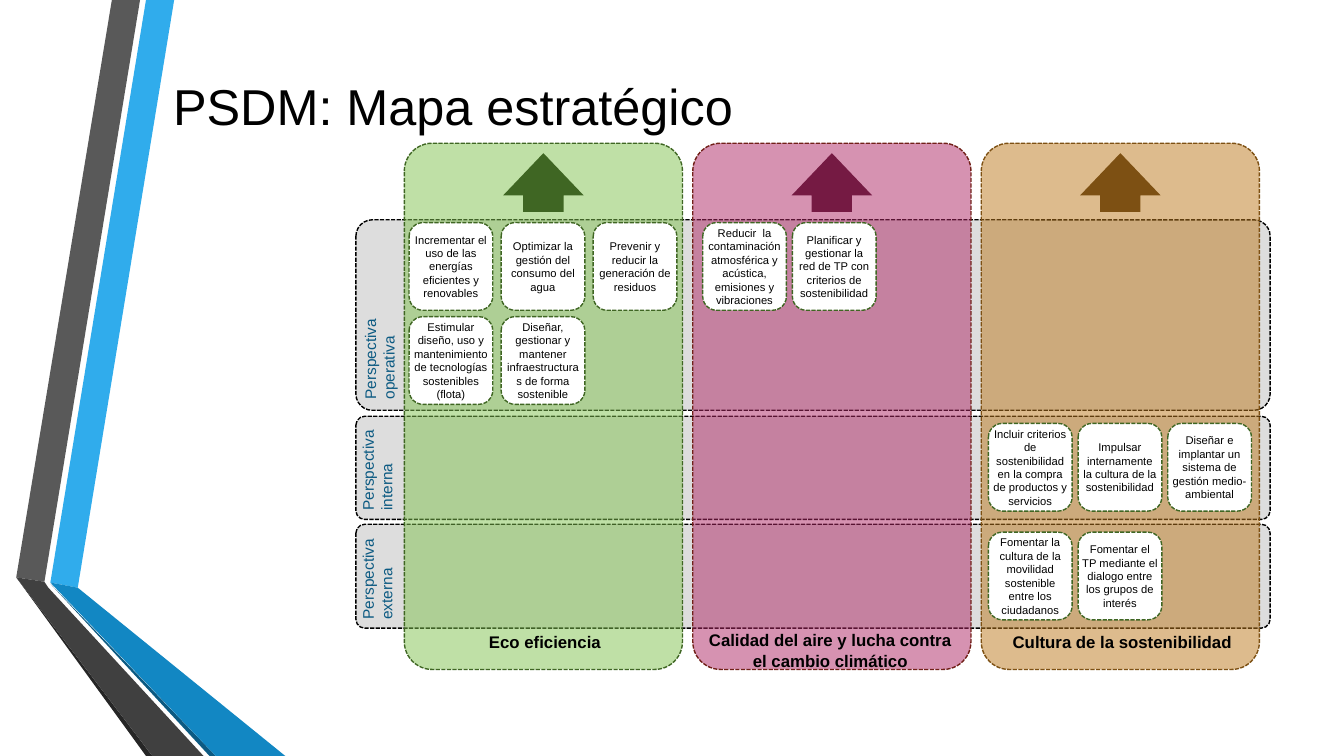
"""Build the PSDM strategic map slide."""
from dataclasses import dataclass

from lxml.etree import SubElement
from pptx import Presentation
from pptx.dml.color import RGBColor
from pptx.enum.dml import MSO_LINE
from pptx.enum.shapes import MSO_SHAPE
from pptx.enum.text import MSO_ANCHOR, PP_ALIGN
from pptx.oxml.ns import qn
from pptx.util import Cm, Pt


@dataclass(frozen=True)
class Theme:
    """Hold the colours and type sizes of the slide."""
    font: str = "Arial"
    title_size: int = 36
    caption_size: int = 12
    band_size: int = 11
    card_size: int = 8
    black: str = "000000"
    white: str = "FFFFFF"
    band: str = "DDDDDD"
    sky: str = "30ACEC"
    blue: str = "1287C3"
    navy: str = "0C5A82"
    grey: str = "595959"
    dark_grey: str = "404040"
    charcoal: str = "262626"
    green: str = "80C34F"
    dark_green: str = "3F6623"
    pink: str = "AF2764"
    dark_pink: str = "751A43"
    red: str = "712018"
    ochre: str = "BC791C"
    brown: str = "7D5013"


THEME = Theme()

RIBBONS = [
    (THEME.sky, [(1.27, 14.68), (1.96, 14.81), (4.39, 0), (3.68, 0)]),
    (THEME.grey, [(3.53, 0), (2.82, 0), (0.41, 14.55), (1.12, 14.66)]),
    (THEME.charcoal, [(0.41, 14.55), (3.68, 19.05), (3.84, 19.05)]),
    (THEME.navy, [(1.27, 14.71), (5.28, 19.05), (5.44, 19.05)]),
    (THEME.blue, [(1.27, 14.68), (5.44, 19.05), (7.19, 19.05), (1.96, 14.81)]),
    (THEME.dark_grey, [(5.13, 19.05), (1.22, 14.81), (1.12, 14.66),
                       (0.41, 14.55), (3.84, 19.05)]),
]

BANDS = [
    (13.21, 2.62, ["Perspectiva externa"]),
    (10.49, 2.6, ["Perspectiva interna"]),
    (5.54, 4.8, ["Perspectiva", "operativa"]),
]

COLUMN_LEFT, COLUMN_STEP, COLUMN_WIDTH = 10.19, 7.27, 7.01
COLUMNS = [
    (THEME.green, THEME.dark_green, THEME.dark_green),
    (THEME.pink, THEME.red, THEME.dark_pink),
    (THEME.ochre, THEME.brown, THEME.brown),
]

CAPTIONS = [
    (17.42, 15.77, 7.01, 1.24, "Calidad del aire y lucha contra el cambio climático"),
    (10.19, 15.82, 7.09, 0.74, "Eco eficiencia"),
    (24.74, 15.82, 7.09, 0.74, "Cultura de la sostenibilidad"),
]

CARD_ROWS = [
    (10.31, 5.61, 2.32, [
        "Incrementar el uso de las energías eficientes y renovables",
        "Optimizar la gestión del consumo del agua",
        "Prevenir y reducir la generación de residuos"]),
    (10.31, 7.98, 2.32, [
        "Estimular diseño, uso y mantenimiento de tecnologías sostenibles (flota)",
        "Diseñar, gestionar y mantener infraestructuras de forma sostenible"]),
    (17.71, 5.61, 2.26, [
        "Reducir  la contaminación atmosférica y acústica, emisiones y vibraciones",
        "Planificar y gestionar la red de TP con criterios de sostenibilidad"]),
    (24.91, 10.67, 2.26, [
        "Incluir criterios de sostenibilidad en la compra de productos y servicios",
        "Impulsar internamente la cultura de la sostenibilidad",
        "Diseñar e implantar un sistema de gestión medio-ambiental"]),
    (24.91, 13.41, 2.26, [
        "Fomentar la cultura de la movilidad sostenible entre los ciudadanos",
        "Fomentar el TP mediante el dialogo entre los grupos de interés"]),
]


def paint(shape, fill, line=None, opacity=None):
    """Set the fill and the dashed outline of a shape, without shadow."""
    shape.shadow.inherit = False
    shape.fill.solid()
    shape.fill.fore_color.rgb = RGBColor.from_string(fill)
    if opacity is not None:
        colour = shape.fill._xPr.find(qn("a:solidFill"))[0]
        SubElement(colour, qn("a:alpha"), val=str(opacity * 1000))
    if line is None:
        shape.line.fill.background()
    else:
        shape.line.color.rgb = RGBColor.from_string(line)
        shape.line.width = Pt(1)
        shape.line.dash_style = MSO_LINE.SQUARE_DOT


def write_text(shape, lines, *, size, color=THEME.black, bold=False,
               align=PP_ALIGN.CENTER, anchor=MSO_ANCHOR.TOP,
               insets=(0, 0, 0, 0), vertical=None):
    """Write one paragraph per line into a shape."""
    frame = shape.text_frame
    frame.text = "\n".join(lines)
    frame.word_wrap = True
    frame.vertical_anchor = anchor
    (frame.margin_left, frame.margin_top,
     frame.margin_right, frame.margin_bottom) = map(Cm, insets)
    if vertical:
        frame._txBody.bodyPr.set("vert", vertical)
    for paragraph in frame.paragraphs:
        paragraph.alignment = align
        font = paragraph.font
        font.name, font.size, font.bold = THEME.font, Pt(size), bold
        font.color.rgb = RGBColor.from_string(color)


def add_box(slide, kind, left, top, width, height, adjustments=()):
    """Add a preset shape measured in centimetres."""
    shape = slide.shapes.add_shape(kind, Cm(left), Cm(top), Cm(width), Cm(height))
    for index, value in enumerate(adjustments):
        shape.adjustments[index] = value
    return shape


def add_ribbon(slide, color, points):
    """Add one facet of the folded ribbon."""
    start, *rest = [(Cm(x), Cm(y)) for x, y in points]
    builder = slide.shapes.build_freeform(*start)
    builder.add_line_segments(rest, close=True)
    paint(builder.convert_to_shape(), color)


def add_band(slide, top, height, lines):
    """Add a horizontal perspective band with its rotated label."""
    band = add_box(slide, MSO_SHAPE.ROUNDED_RECTANGLE, 8.97, top, 23.04, height, [0.086])
    paint(band, THEME.band, THEME.black)
    write_text(band, lines, size=THEME.band_size, color=THEME.navy,
               align=PP_ALIGN.LEFT, insets=(0, 0, 0.28, 0.15), vertical="vert270")


def add_column(slide, left, fill, outline, arrow_color):
    """Add a translucent column topped by an up arrow."""
    column = add_box(slide, MSO_SHAPE.ROUNDED_RECTANGLE, left, 3.61,
                     COLUMN_WIDTH, 13.26, [0.1])
    paint(column, fill, outline, opacity=50)
    arrow_width = 2.03
    arrow = add_box(slide, MSO_SHAPE.UP_ARROW, left + (COLUMN_WIDTH - arrow_width) / 2,
                    3.86, arrow_width, 1.48, [0.5, 0.72])
    paint(arrow, arrow_color)


def add_caption(slide, left, top, width, height, text):
    """Add the bold name at the foot of a column."""
    caption = slide.shapes.add_textbox(Cm(left), Cm(top), Cm(width), Cm(height))
    write_text(caption, [text], size=THEME.caption_size, bold=True,
               insets=(0.23, 0.11, 0.23, 0.11))


def add_card(slide, left, top, text):
    """Add a white card holding one objective."""
    card = add_box(slide, MSO_SHAPE.ROUNDED_RECTANGLE, left, top, 2.11, 2.21)
    paint(card, THEME.white, THEME.dark_green)
    write_text(card, [text], size=THEME.card_size, anchor=MSO_ANCHOR.MIDDLE)


def add_title(slide, text):
    """Place and format the slide title."""
    title = slide.shapes.title
    title.left, title.top, title.width, title.height = map(Cm, (4.11, 1.24, 27.84, 2.82))
    write_text(title, [text], size=THEME.title_size, align=PP_ALIGN.LEFT,
               anchor=MSO_ANCHOR.MIDDLE, insets=(0.25, 0.13, 0.25, 0.13))


def main():
    """Assemble the slide and save it."""
    presentation = Presentation()
    presentation.slide_width, presentation.slide_height = Cm(33.87), Cm(19.05)
    slide = presentation.slides.add_slide(presentation.slide_layouts[5])
    add_title(slide, "PSDM: Mapa estratégico")
    for ribbon in RIBBONS:
        add_ribbon(slide, *ribbon)
    for band in BANDS:
        add_band(slide, *band)
    for index, colors in enumerate(COLUMNS):
        add_column(slide, COLUMN_LEFT + index * COLUMN_STEP, *colors)
    for caption in CAPTIONS:
        add_caption(slide, *caption)
    for left, top, step, objectives in CARD_ROWS:
        for index, objective in enumerate(objectives):
            add_card(slide, left + index * step, top, objective)
    presentation.save("out.pptx")


if __name__ == "__main__":
    main()
